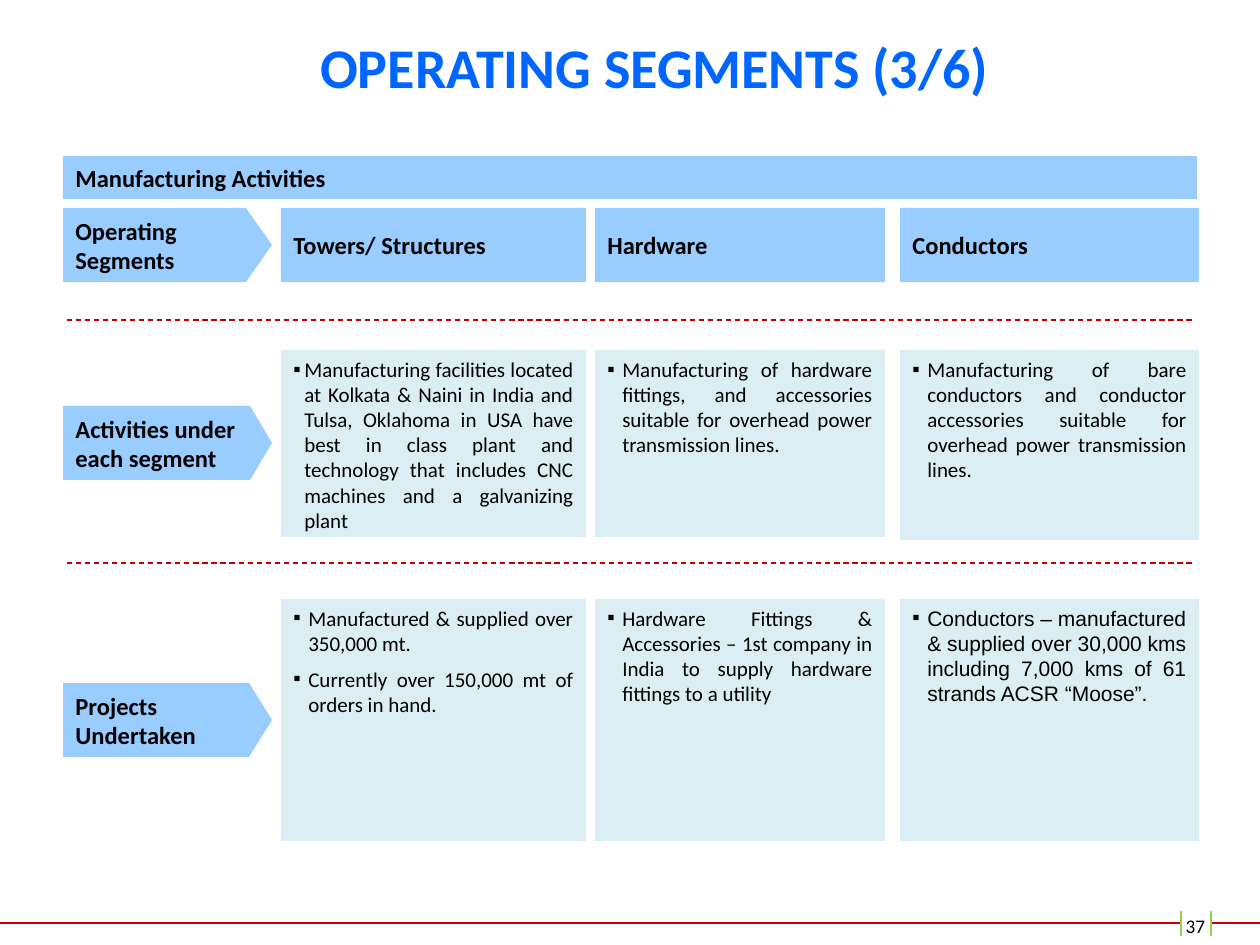
from lxml.etree import SubElement as Sub
from pptx import Presentation
from pptx.dml.color import RGBColor
from pptx.enum.dml import MSO_LINE as Dash
from pptx.enum.shapes import MSO_CONNECTOR as Conn, MSO_SHAPE as Shape
from pptx.enum.text import MSO_ANCHOR as Anchor, PP_ALIGN as Align
from pptx.oxml.ns import qn
from pptx.util import Emu, Pt

BLUE = RGBColor(0x00, 0x66, 0xFF)
SKY = RGBColor(0x99, 0xCC, 0xFF)
PALE = RGBColor(0xDB, 0xEE, 0xF4)
RED = RGBColor(0xCC, 0x00, 0x00)
DARK = RGBColor(0xC0, 0x00, 0x00)
GREEN = RGBColor(0x92, 0xD0, 0x50)
BLACK = RGBColor(0x00, 0x00, 0x00)

SCALE = 914400 / 126
COLS = [(281, 305), (595, 290), (900, 299)]
HEADS = ["Towers/ Structures", "Hardware", "Conductors"]
TAGS = [
    (208, "Operating Segments", 0.352),
    (406, "Activities under each segment", 0.296),
    (683, "Projects Undertaken", 0.31),
]
WORK = [
    ["Manufacturing facilities located at Kolkata & Naini in India and Tulsa, "
     "Oklahoma in USA have best in class plant and technology that includes "
     "CNC machines and a galvanizing plant"],
    ["Manufacturing of hardware fittings, and accessories suitable for "
     "overhead power transmission lines."],
    ["Manufacturing of bare conductors and conductor accessories suitable for "
     "overhead power transmission lines."],
]
DONE = [
    ["Manufactured & supplied over 350,000 mt.",
     "Currently over 150,000 mt of orders in hand."],
    ["Hardware Fittings & Accessories – 1st company in India to supply "
     "hardware fittings to a utility"],
    ["Conductors – manufactured & supplied over 30,000 kms including 7,000 kms "
     "of 61 strands ACSR “Moose”."],
]


def px(*nums):
    """Turn px lengths into EMU."""
    return [Emu(round(n * SCALE)) for n in nums]


def style(para, size, color=BLACK, bold=False, face="Calibri"):
    """Format every run of a paragraph."""
    for run in para.runs:
        font = run.font
        font.name, font.size, font.bold = face, Pt(size), bold
        font.color.rgb = color


def add_box(slide, area, fill, kind=Shape.RECTANGLE):
    """Add a filled shape without outline or shadow."""
    box = slide.shapes.add_shape(kind, *px(*area))
    box.shadow.inherit = False
    box.fill.solid()
    box.fill.fore_color.rgb = fill
    box.line.fill.background()
    return box


def add_label(slide, area, text, kind=Shape.RECTANGLE):
    """Add a bold heading on a sky blue shape."""
    box = add_box(slide, area, SKY, kind)
    frame = box.text_frame
    frame.text = text
    frame.vertical_anchor = Anchor.MIDDLE
    para = frame.paragraphs[0]
    para.alignment = Align.LEFT
    style(para, 14, bold=True)
    return box


def add_tag(slide, top, text, point):
    """Add a row heading that points right."""
    tag = add_label(slide, (63, top, 209, 74), text, Shape.PENTAGON)
    tag.adjustments[0] = point


def add_list(slide, area, items, indent=15, face="Calibri"):
    """Add a pale panel of justified bullets."""
    frame = add_box(slide, area, PALE).text_frame
    frame.vertical_anchor = Anchor.TOP
    frame.text = "\n".join(items)
    step = px(indent)[0]
    for para in frame.paragraphs:
        para.alignment = Align.JUSTIFY
        para.space_after = Pt(6)
        props = para._p.get_or_add_pPr()
        props.set("marL", str(step))
        props.set("indent", str(-step))
        Sub(props, qn("a:buFont"), typeface="Arial")
        Sub(props, qn("a:buChar"), char="▪")
        style(para, 12, face=face)


def add_text(slide, area, text, insets, size, color=BLACK, bold=False):
    """Add a centred line of text."""
    frame = slide.shapes.add_textbox(*px(*area)).text_frame
    frame.word_wrap = True
    frame.vertical_anchor = Anchor.MIDDLE
    (frame.margin_left, frame.margin_top,
     frame.margin_right, frame.margin_bottom) = px(*insets)
    frame.text = text
    para = frame.paragraphs[0]
    para.alignment = Align.CENTER
    style(para, size, color, bold)


def add_line(slide, ends, color, dash=None):
    """Add a thin straight line."""
    line = slide.shapes.add_connector(Conn.STRAIGHT, *px(*ends))
    line.line.color.rgb = color
    line.line.width = Pt(0.75)
    if dash:
        line.line.dash_style = dash
    Sub(line._element.spPr, qn("a:effectLst"))


def add_foot(slide):
    """Add the footer rule and the page number."""
    for left, right in [(0, 1181), (1211, 1260)]:
        add_line(slide, (left, 923, right, 923), RED)
    for x in (1181, 1211):
        add_line(slide, (x, 936, x, 911), GREEN)
    add_text(slide, (1183, 914, 25, 24), "37", (0, 0, 0, 0), 11)


def main():
    """Build the slide and save it."""
    deck = Presentation()
    deck.slide_width, deck.slide_height = px(1260, 945)
    slide = deck.slides.add_slide(deck.slide_layouts[6])
    add_foot(slide)
    add_text(slide, (218, 4, 861, 125), "OPERATING SEGMENTS (3/6)",
             (25, 6, 13, 6), 32, BLUE, True)
    add_label(slide, (63, 156, 1134, 43), "Manufacturing Activities")
    for tag in TAGS:
        add_tag(slide, *tag)
    for i, (left, wide) in enumerate(COLS):
        last = i == len(COLS) - 1
        add_label(slide, (left, 208, wide, 74), HEADS[i])
        add_list(slide, (left, 350, wide, 190 if last else 187), WORK[i],
                 15 if i else 11)
        add_list(slide, (left, 599, wide, 242), DONE[i],
                 face="Arial" if last else "Calibri")
    for y in (320, 563):
        add_line(slide, (67, y, 1192, y), DARK, Dash.DASH)
    deck.save("out.pptx")


if __name__ == "__main__":
    main()
